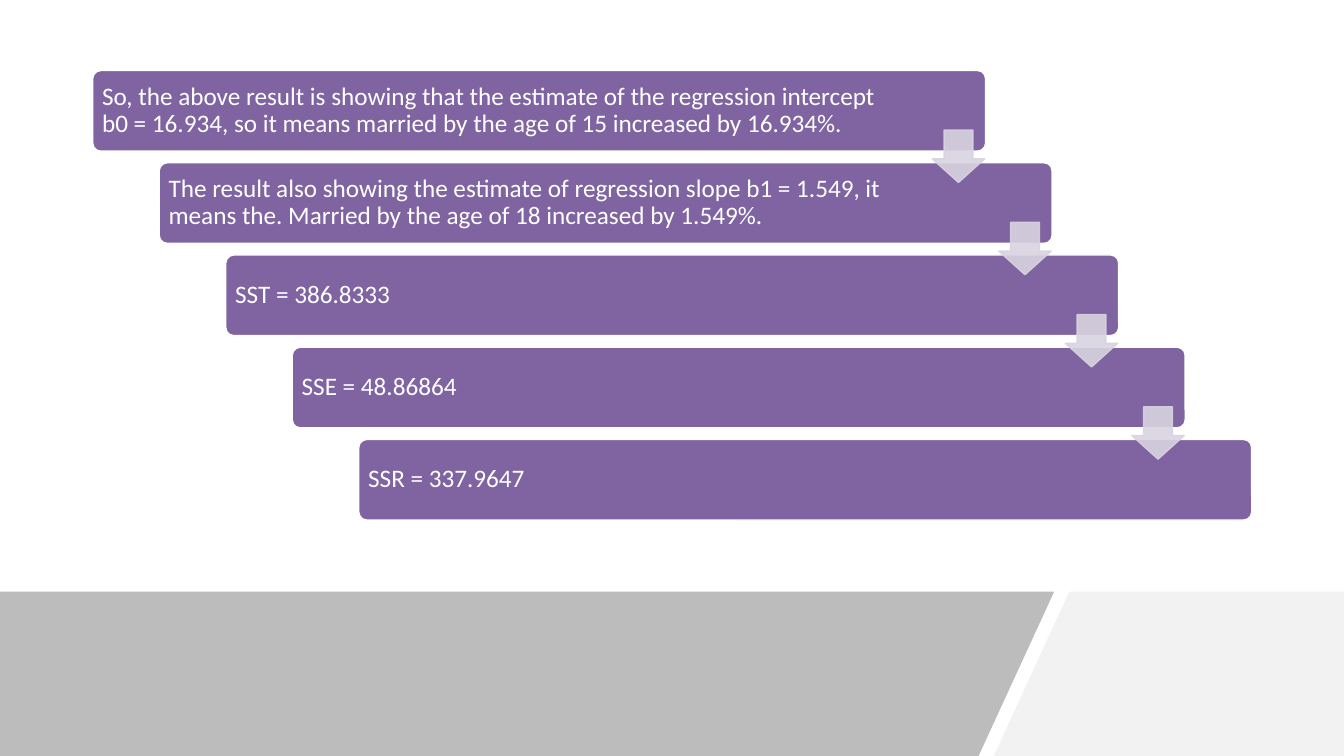
from lxml.etree import SubElement
from pptx import Presentation
from pptx.dml.color import RGBColor
from pptx.enum.shapes import MSO_SHAPE
from pptx.enum.text import MSO_ANCHOR, PP_ALIGN
from pptx.oxml.ns import qn
from pptx.util import Emu, Pt

EMU_PER_PX = 4572  # 200 px to the inch
SLIDE_WIDTH, SLIDE_HEIGHT = 2667, 1500
BAND_TOP = 1174
STEP_X, STEP_Y = 132, 183

STATEMENTS = [
    "So, the above result is showing that the estimate of the regression intercept "
    "b0 = 16.934, so it means married by the age of 15 increased by 16.934%.",
    "The result also showing the estimate of regression slope b1 = 1.549, it means the. "
    "Married by the age of 18 increased by 1.549%.",
    "SST = 386.8333",
    "SSE = 48.86864",
    "SSR = 337.9647",
]


def px(length):
    return Emu(length * EMU_PER_PX)


def paint(fill, color, opacity=100):
    """Give a fill a solid colour with an opacity in percent."""
    fill.solid()
    fill.fore_color.rgb = RGBColor.from_string(color)
    if opacity < 100:
        for color_element in fill._xPr.iter(qn("a:srgbClr")):
            SubElement(color_element, qn("a:alpha"), val=str(opacity * 1000))


def style_shape(shape, color, opacity=100, line=None):
    shape.shadow.inherit = False
    paint(shape.fill, color, opacity)
    if line:
        shape.line.width = Pt(1)
        paint(shape.line.fill, line, opacity)
    else:
        shape.line.fill.background()


def add_polygon(slide, points, color, opacity=100):
    builder = slide.shapes.build_freeform(*points[0], scale=EMU_PER_PX)
    builder.add_line_segments(points[1:], close=True)
    style_shape(builder.convert_to_shape(), color, opacity)


def add_preset(slide, preset, left, top, width, height, adjustments, **style):
    shape = slide.shapes.add_shape(preset, px(left), px(top), px(width), px(height))
    for index, value in enumerate(adjustments):
        shape.adjustments[index] = value
    style_shape(shape, **style)
    return shape


def write_text(shape, text, size=18, font="Calibri", color="FFFFFF", right_inset=14):
    frame = shape.text_frame
    frame.word_wrap = True
    frame.vertical_anchor = MSO_ANCHOR.MIDDLE
    frame.margin_left = frame.margin_top = frame.margin_bottom = px(14)
    frame.margin_right = px(right_inset)
    paragraph = frame.paragraphs[0]
    paragraph.alignment = PP_ALIGN.LEFT
    paragraph.line_spacing = 0.9
    run = paragraph.add_run()
    run.text = text
    run.font.size = Pt(size)
    run.font.name = font
    run.font.color.rgb = RGBColor.from_string(color)


def add_bottom_band(slide):
    add_polygon(slide, [(2122, BAND_TOP), (SLIDE_WIDTH, BAND_TOP),
                        (SLIDE_WIDTH, SLIDE_HEIGHT), (1972, SLIDE_HEIGHT)], "F2F2F2")
    add_polygon(slide, [(0, BAND_TOP), (2092, BAND_TOP),
                        (1942, SLIDE_HEIGHT), (0, SLIDE_HEIGHT)], "595959", opacity=40)


def add_staircase(slide, statements):
    for step, statement in enumerate(statements):
        bar = add_preset(slide, MSO_SHAPE.ROUNDED_RECTANGLE,
                         184 + step * STEP_X, 140 + step * STEP_Y, 1772, 160,
                         [0.1], color="8064A2", line="FFFFFF")
        write_text(bar, statement, right_inset=200 if step == 0 else 254)
    for step in range(len(statements) - 1):
        add_preset(slide, MSO_SHAPE.DOWN_ARROW,
                   1850 + step * STEP_X, 258 + step * STEP_Y, 104, 104,
                   [0.55, 0.45], color="D8D3E0", opacity=90, line="D8D3E0")


def main():
    presentation = Presentation()
    presentation.slide_width = px(SLIDE_WIDTH)
    presentation.slide_height = px(SLIDE_HEIGHT)
    slide = presentation.slides.add_slide(presentation.slide_layouts[6])
    add_bottom_band(slide)
    add_staircase(slide, STATEMENTS)
    presentation.save("out.pptx")


if __name__ == "__main__":
    main()
